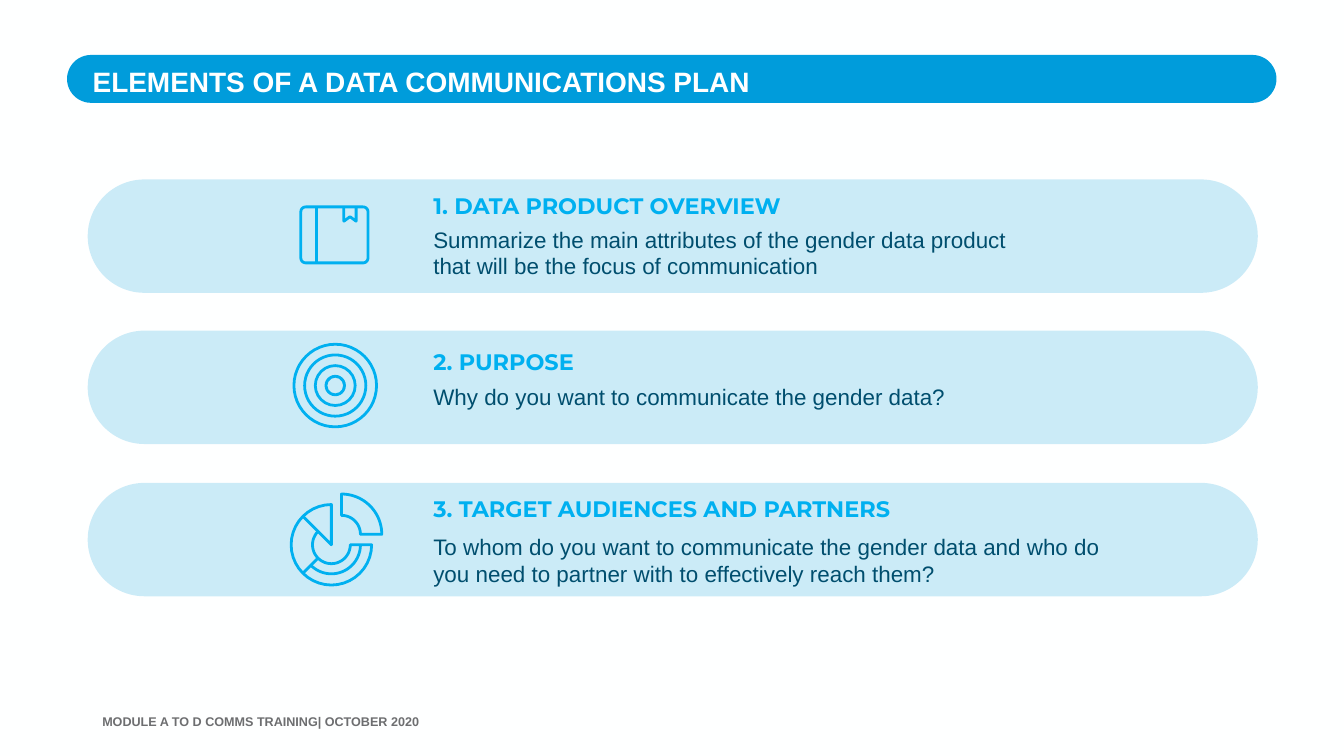
from math import cos, radians, sin

from lxml import etree
from pptx import Presentation
from pptx.dml.color import RGBColor
from pptx.enum.shapes import MSO_SHAPE
from pptx.enum.text import MSO_ANCHOR, PP_ALIGN
from pptx.oxml.ns import qn
from pptx.util import Pt

PAPER = RGBColor(0xFE, 0xFF, 0xFF)
BLUE = RGBColor(0x00, 0x9C, 0xDB)
BRIGHT_BLUE = RGBColor(0x00, 0xB0, 0xF0)
NAVY = RGBColor(0x00, 0x4E, 0x6E)
GREY = RGBColor(0x6D, 0x6E, 0x70)

TITLE = {"name": "Arial", "size": Pt(40), "bold": True}
HEADING = {"name": "Montserrat", "size": Pt(32), "bold": True}
BODY = {"name": "Arial", "size": Pt(32)}
FOOTER = {"name": "Arial", "size": Pt(18), "bold": True}

STROKE = 4
ROW_LEFT, ROW_WIDTH, ROW_HEIGHT = 125.3, 1671.8, 162
TEXT_INDENT = 486.7


def add_text(slide, box, text, style, color, wrap=True):
    shape = slide.shapes.add_textbox(*map(Pt, box))
    frame = shape.text_frame
    frame.word_wrap = wrap
    frame.vertical_anchor = MSO_ANCHOR.TOP
    paragraph = frame.paragraphs[0]
    paragraph.alignment = PP_ALIGN.LEFT
    run = paragraph.add_run()
    run.text = text
    for name, value in style.items():
        setattr(run.font, name, value)
    run.font.color.rgb = color


def add_filled(slide, kind, box, color, adjustment, opacity=None):
    shape = slide.shapes.add_shape(kind, *map(Pt, box))
    shape.adjustments[0] = adjustment
    shape.shadow.inherit = False
    shape.fill.solid()
    shape.fill.fore_color.rgb = color
    shape.line.fill.background()
    if opacity is not None:
        fill_color = shape.fill._xPr.find(qn("a:solidFill"))[0]
        alpha = etree.SubElement(fill_color, qn("a:alpha"))
        alpha.set("val", str(opacity * 1000))


def add_outline(slide, contours):
    """Draw several (points, closed) contours as one stroked freeform."""
    builder = None
    for points, closed in contours:
        start, *rest = [(Pt(x), Pt(y)) for x, y in points]
        if builder is None:
            builder = slide.shapes.build_freeform(*start)
        else:
            builder.move_to(*start)
        builder.add_line_segments(rest, close=closed)
    shape = builder.convert_to_shape()
    shape.shadow.inherit = False
    shape.fill.background()
    shape.line.color.rgb = BRIGHT_BLUE
    shape.line.width = Pt(STROKE)


def arc(center, radius, start, end, steps=30):
    """Points along an arc; angles in degrees, clockwise from the right."""
    angles = [radians(start + (end - start) * i / steps) for i in range(steps + 1)]
    return [(center[0] + radius * cos(a), center[1] + radius * sin(a)) for a in angles]


def draw_book(slide, left, top):
    x, y = left + 304.5, top + 39.3
    width, height, radius = 96, 80, 7
    corners = [(x + radius, y + radius, 180),
               (x + width - radius, y + radius, 270),
               (x + width - radius, y + height - radius, 0),
               (x + radius, y + height - radius, 90)]
    cover = [point for cx, cy, angle in corners
             for point in arc((cx, cy), radius, angle, angle + 90, 6)]
    spine = [(x + 22.7, y), (x + 22.7, y + height)]
    ribbon = [(x + 61.5, y), (x + 61.5, y + 20.5), (x + 70.3, y + 14),
              (x + 79, y + 20.5), (x + 79, y)]
    add_outline(slide, [(cover, True), (spine, False), (ribbon, False)])


def draw_target(slide, left, top):
    x, y = left + 353.7, top + 78.5
    for diameter in (122, 91.5, 61, 30.5):
        box = (x - diameter / 2, y - diameter / 2, diameter, diameter)
        add_filled(slide, MSO_SHAPE.DONUT, box, BRIGHT_BLUE, STROKE / diameter)


def draw_ring_chart(slide, left, top):
    center = (left + 348.2, top + 88.5)
    outer, middle, inner = 57.5, 41.5, 27
    ring = arc(center, outer, 270, 0) + arc(center, inner, 0, 225) + [center]
    spokes = [[*arc(center, inner, angle, angle, 1)[:1],
               *arc(center, outer, angle, angle, 1)[:1]] for angle in (135, 225)]
    detached = (center[0] + 14.5, center[1] - 15)
    quarter = arc(detached, outer, 270, 360) + arc(detached, inner, 360, 270)
    add_outline(slide, [(ring, True), (arc(center, middle, 0, 135), False),
                        *((spoke, False) for spoke in spokes), (quarter, True)])


ROWS = [
    {"top": 256.3, "icon": draw_book, "heading": "1. DATA PRODUCT OVERVIEW",
     "heading_box": (15.1, 539.3), "body_box": (62.6, 846, 85),
     "body": "Summarize the main attributes of the gender data product "
             "that will be the focus of communication"},
    {"top": 472.3, "icon": draw_target, "heading": "2. PURPOSE",
     "heading_box": (21.6, 229.7), "body_box": (71.3, 797.8, 46),
     "body": "Why do you want to communicate the gender data?"},
    {"top": 689.8, "icon": draw_ring_chart,
     "heading": "3. TARGET AUDIENCES AND PARTNERS",
     "heading_box": (14.4, 715), "body_box": (67.7, 972, 85),
     "body": "To whom do you want to communicate the gender data and who do "
             "you need to partner with to effectively reach them?"},
]


def draw_title(slide, left, top, width, height):
    add_filled(slide, MSO_SHAPE.ROUNDED_RECTANGLE, (left, top, width, height), BLUE, 0.5)
    add_text(slide, (left + 29.5, top + 10, width - 56, 48.2),
             "ELEMENTS OF A DATA COMMUNICATIONS PLAN", TITLE, PAPER)


def draw_row(slide, row, left, width, height):
    top = row["top"]
    add_filled(slide, MSO_SHAPE.ROUNDED_RECTANGLE, (left, top, width, height),
               BLUE, 0.5, opacity=20)
    row["icon"](slide, left, top)
    text_left = left + TEXT_INDENT
    offset, text_width = row["heading_box"]
    add_text(slide, (text_left, top + offset, text_width, 46),
             row["heading"], HEADING, BRIGHT_BLUE, wrap=False)
    offset, text_width, text_height = row["body_box"]
    add_text(slide, (text_left, top + offset, text_width, text_height),
             row["body"], BODY, NAVY)


def main():
    presentation = Presentation()
    presentation.slide_width, presentation.slide_height = Pt(1920.24), Pt(1080)
    slide = presentation.slides.add_slide(presentation.slide_layouts[6])
    slide.background.fill.solid()
    slide.background.fill.fore_color.rgb = PAPER
    draw_title(slide, 95.8, 78.5, 1728, 68.4)
    for row in ROWS:
        draw_row(slide, row, ROW_LEFT, ROW_WIDTH, ROW_HEIGHT)
    add_text(slide, (139, 1016, 1023.8, 20.9),
             "MODULE A TO D COMMS TRAINING| OCTOBER 2020", FOOTER, GREY)
    presentation.save("out.pptx")


if __name__ == "__main__":
    main()
